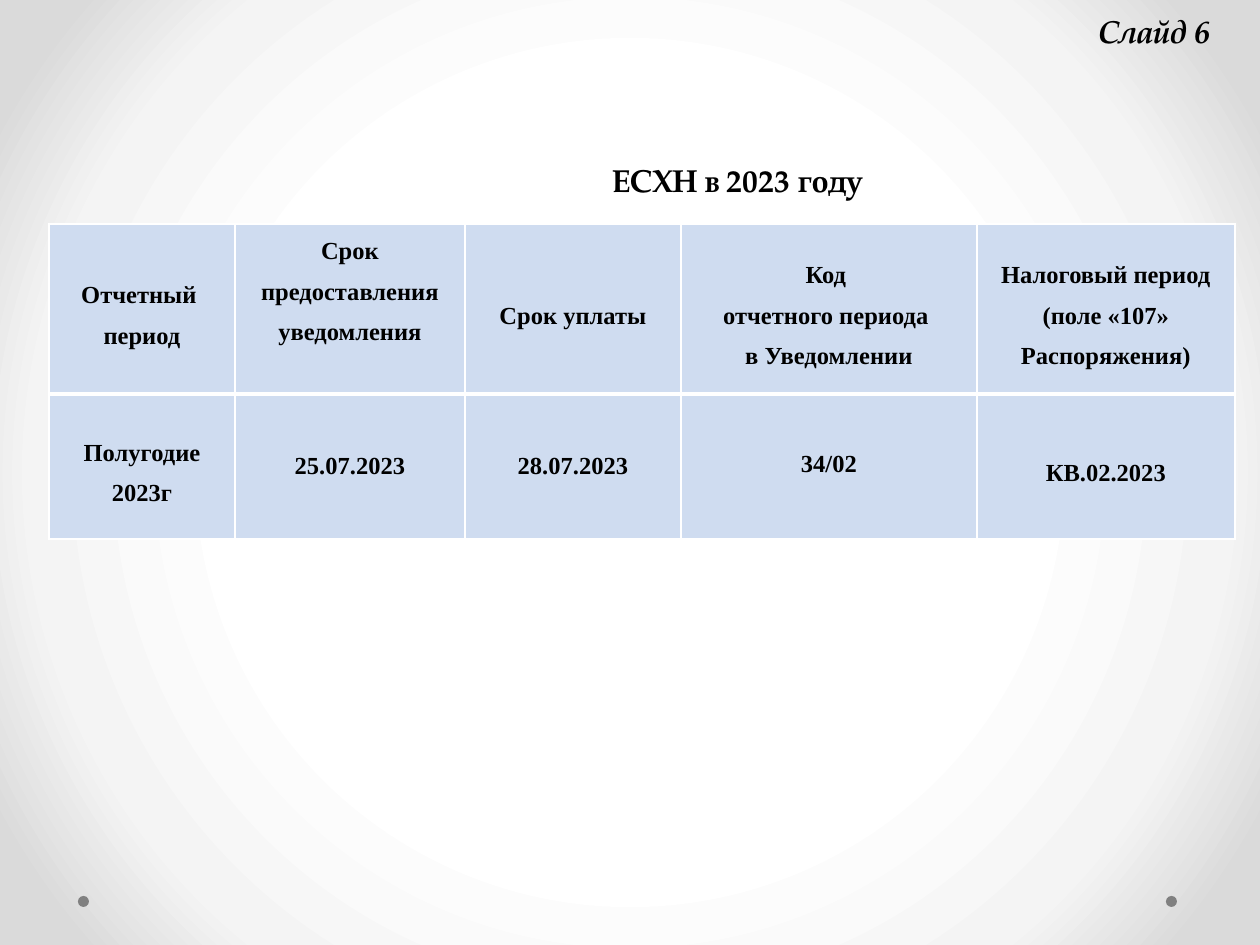
from dataclasses import dataclass

from lxml import etree
from pptx import Presentation, util as u
from pptx.dml.color import RGBColor
from pptx.enum import shapes, text
from pptx.oxml import ns


@dataclass(frozen=True)
class Theme:
    ink: str = "000000"
    cell: str = "CFDCF0"
    rule: str = "FFFFFF"
    dot: str = "808080"
    glow: tuple = ((50, "FFFFFF"), (76, "F4F4F4"), (92, "DADADA"))
    serif: str = "Times New Roman"
    title: str = "TeX Gyre Pagella"
    body_pt: int = 14
    head_pt: int = 18
    thin: int = 1
    thick: int = 3


T = Theme()

# Each cell: paragraphs, line spacing, anchor, insets (left, top, right) in px
MID, TOP = text.MSO_ANCHOR.MIDDLE, text.MSO_ANCHOR.TOP
SIDE = (9, 0, 9)
ROWS = [
    [
        (["Отчетный ", "период"], 1.5, MID, SIDE),
        (["Срок предоставления уведомления"], 1.5, TOP, SIDE),
        (["Срок уплаты"], 1.5, MID, SIDE),
        (["Код ", "отчетного периода ", "в Уведомлении"], 1.5, MID, SIDE),
        (["Налоговый период", "(поле «107»", "Распоряжения)"], 1.5, MID, SIDE),
    ],
    [
        (["Полугодие 2023г"], 1.5, MID, SIDE),
        (["25.07.2023"], 1, MID, SIDE),
        (["28.07.2023"], 1, MID, SIDE),
        (["34/02"], 1, TOP, (1, 57, 1)),
        (["КВ.02.2023"], 1.5, MID, SIDE),
    ],
]
WIDTHS = [186, 230, 216, 296, 258]
HEIGHTS = [170, 145]
GRID = (49, 224)
LABELS = [
    ("ЕСХН в 2023 году", (600, 155, 290, 89), False),
    ("Слайд 6", (1086, 6, 147, 50), True),
]
DOTS = [(1166, 896), (78, 896)]
DOT = 11


def px(n):
    return u.Emu(round(n * 914400 / 126))


def add_run(para, words, font, size, italic=False):
    run = para.add_run()
    run.text = words
    run.font.name = font
    run.font.size = u.Pt(size)
    run.font.bold = True
    run.font.italic = italic
    run.font.color.rgb = RGBColor.from_string(T.ink)


def node(parent, tag, **attrs):
    return etree.SubElement(parent, ns.qn(tag), {k: str(v) for k, v in attrs.items()})


def paint_back(slide):
    """Fill the background with a round gradient from the centre."""
    slide.background.fill.gradient()
    grad = slide.element.xpath(".//p:bgPr/a:gradFill")[0]
    for child in list(grad):
        grad.remove(child)
    stops = node(grad, "a:gsLst")
    for pos, color in T.glow:
        node(node(stops, "a:gs", pos=pos * 1000), "a:srgbClr", val=color)
    ring = node(grad, "a:path", path="circle")
    node(ring, "a:fillToRect", l=50000, t=50000, r=50000, b=50000)


def rule_cell(cell, row):
    """Draw the cell's borders, thicker between the head and the body."""
    props = cell._tc.get_or_add_tcPr()
    heavy = "B" if row == 0 else "T"
    for side in "LRTB":
        width = T.thick if side == heavy else T.thin
        line = node(props, f"a:ln{side}", w=u.Pt(width))
        node(node(line, "a:solidFill"), "a:srgbClr", val=T.rule)


def fill_cell(cell, row, item):
    paras, space, anchor, (left, top, right) = item
    rule_cell(cell, row)
    cell.fill.solid()
    cell.fill.fore_color.rgb = RGBColor.from_string(T.cell)
    cell.vertical_anchor = anchor
    cell.margin_left, cell.margin_top = px(left), px(top)
    cell.margin_right, cell.margin_bottom = px(right), 0
    frame = cell.text_frame
    for i, words in enumerate(paras):
        para = frame.paragraphs[0] if i == 0 else frame.add_paragraph()
        para.alignment = text.PP_ALIGN.CENTER
        para.line_spacing = float(space)
        add_run(para, words, T.serif, T.body_pt)


def add_grid(slide):
    box = (*GRID, sum(WIDTHS), sum(HEIGHTS))
    table = slide.shapes.add_table(len(ROWS), len(WIDTHS), *map(px, box)).table
    table.first_row = table.horz_banding = False
    for col, width in zip(table.columns, WIDTHS):
        col.width = px(width)
    for r, (items, height) in enumerate(zip(ROWS, HEIGHTS)):
        table.rows[r].height = px(height)
        for c, item in enumerate(items):
            fill_cell(table.cell(r, c), r, item)


def add_label(slide, words, box, italic):
    frame = slide.shapes.add_textbox(*map(px, box)).text_frame
    frame.word_wrap = False
    frame.auto_size = text.MSO_AUTO_SIZE.SHAPE_TO_FIT_TEXT
    add_run(frame.paragraphs[0], words, T.title, T.head_pt, italic)


def add_dot(slide, x, y):
    dot = slide.shapes.add_shape(shapes.MSO_SHAPE.OVAL, *map(px, (x, y, DOT, DOT)))
    dot.shadow.inherit = False
    dot.fill.solid()
    dot.fill.fore_color.rgb = RGBColor.from_string(T.dot)
    dot.line.fill.background()


def main():
    deck = Presentation()
    deck.slide_width, deck.slide_height = px(1260), px(945)
    slide = deck.slides.add_slide(deck.slide_layouts[6])
    paint_back(slide)
    for spot in DOTS:
        add_dot(slide, *spot)
    add_grid(slide)
    for label in LABELS:
        add_label(slide, *label)
    deck.save("out.pptx")


if __name__ == "__main__":
    main()
